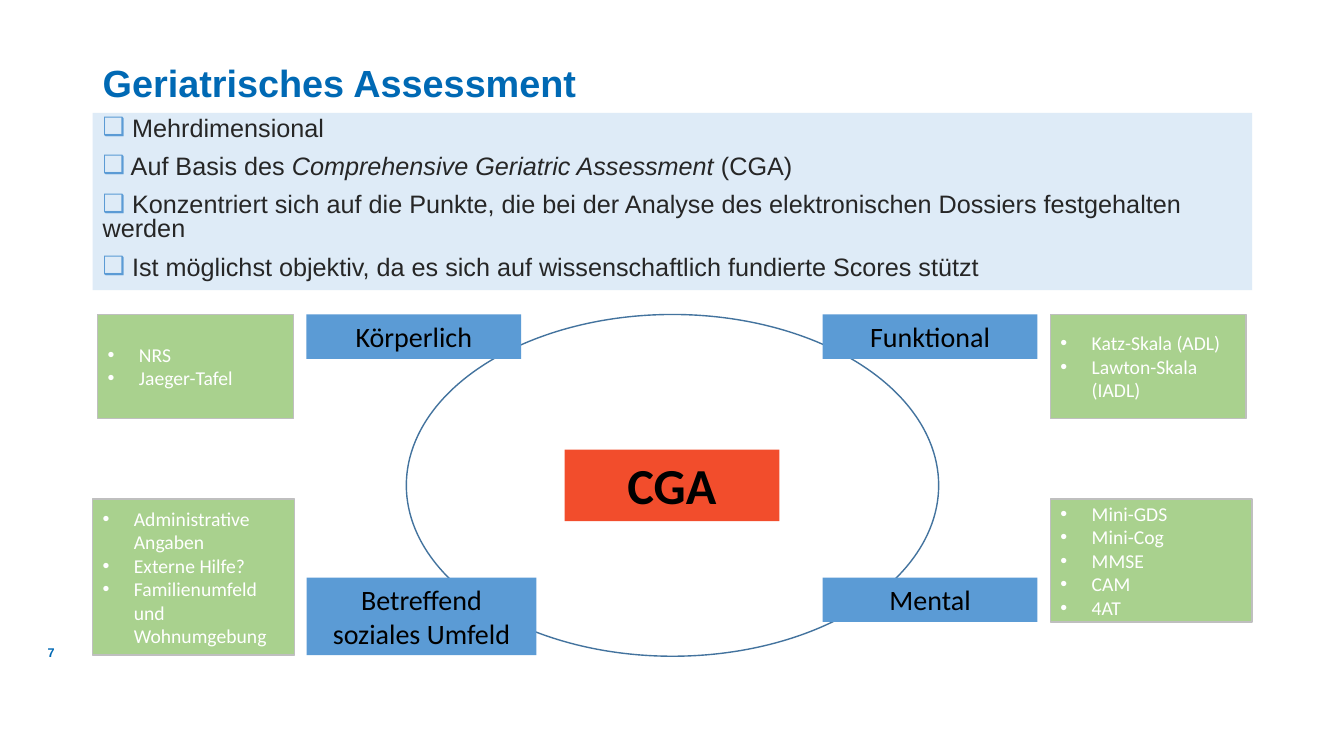
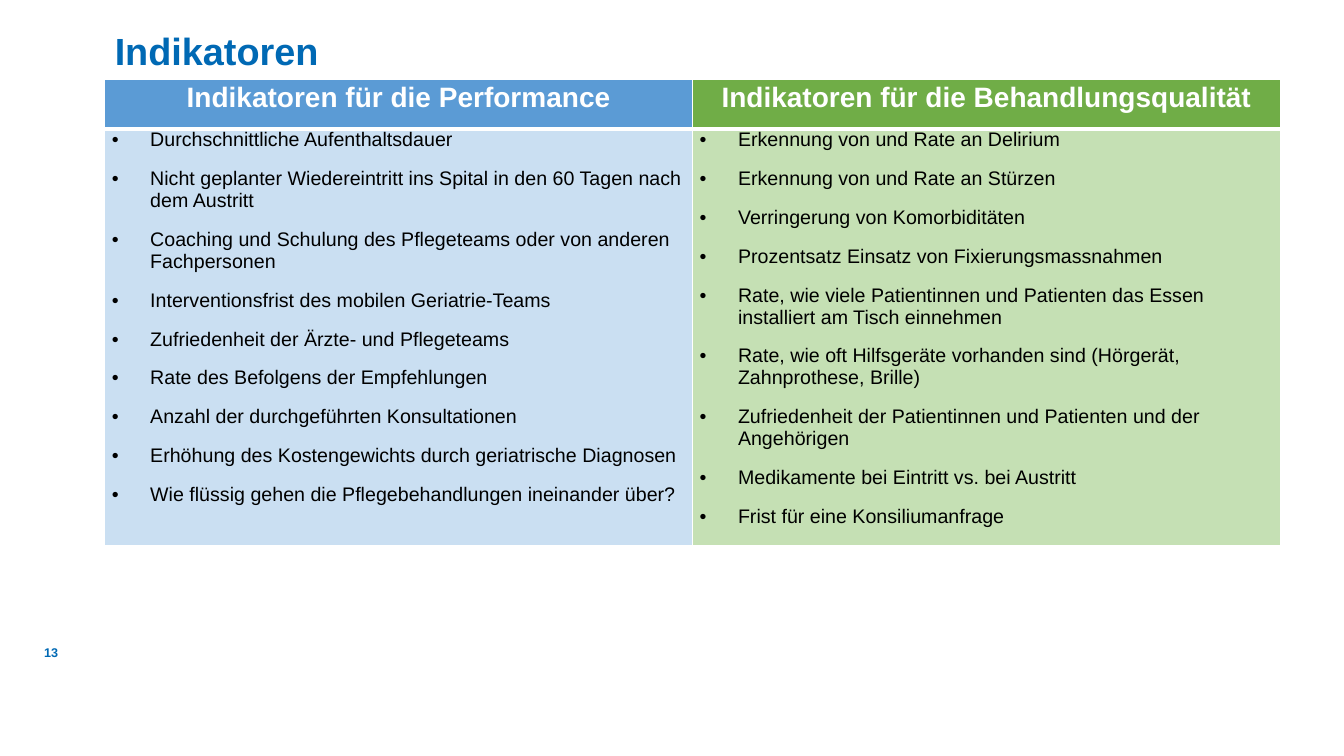
from lxml.etree import SubElement
from pptx import Presentation
from pptx.dml.color import RGBColor
from pptx.enum.shapes import MSO_SHAPE
from pptx.enum.text import MSO_ANCHOR, PP_ALIGN
from pptx.oxml.ns import qn
from pptx.util import Emu, Pt

EMU_PER_PX = 9144


def px(length):
    return Emu(length * EMU_PER_PX)


def rgb(color):
    return RGBColor.from_string(color)


def add_bullet(paragraph, mark, color, indent):
    properties = paragraph._p.get_or_add_pPr()
    properties.set("marL", str(px(indent)))
    properties.set("indent", str(px(-indent)))
    if color:
        SubElement(SubElement(properties, qn("a:buClr")), qn("a:srgbClr"), val=color)
    SubElement(properties, qn("a:buFont"), typeface="Arial")
    SubElement(properties, qn("a:buChar"), char=mark)


def write_text(frame, paragraphs, size=14, color="000000", font="Arial", bold=False,
               align=PP_ALIGN.LEFT, anchor=None, line_spacing=1.0, before=0, after=0,
               bullet=None, bullet_color=None, indent=0):
    frame.word_wrap = True
    if anchor is not None:
        frame.vertical_anchor = anchor
    for index, content in enumerate(paragraphs):
        paragraph = frame.add_paragraph() if index else frame.paragraphs[0]
        paragraph.alignment = align
        paragraph.line_spacing = line_spacing
        paragraph.space_before = Pt(before if index else 0)
        paragraph.space_after = Pt(after)
        if bullet:
            add_bullet(paragraph, bullet, bullet_color, indent)
        for part, words in enumerate(content.split("*")):
            run = paragraph.add_run()
            run.text = words
            run.font.name = font
            run.font.size = Pt(size)
            run.font.bold = bold
            run.font.italic = part % 2 == 1
            run.font.color.rgb = rgb(color)


class Deck:
    TITLE_BLUE = "0069B4"
    BLUE = "5B9BD5"
    GREEN = "70AD47"
    PALE_BLUE = "DEEBF7"
    SCORE_GREEN = "A9D18E"
    RED = "F24D2C"
    WHITE = "FFFFFF"

    def __init__(self):
        self.presentation = Presentation()
        self.presentation.slide_width = px(1333)
        self.presentation.slide_height = px(750)
        self.slide = None

    def new_slide(self, title, number, left, top):
        self.slide = self.presentation.slides.add_slide(self.presentation.slide_layouts[6])
        self.text((0, 632, 105, 30), [f"{number} "], size=9, color=self.TITLE_BLUE,
                  bold=True, align=PP_ALIGN.CENTER, anchor=MSO_ANCHOR.MIDDLE)
        self.text((left, top, 1150, 52), [title], size=27, color=self.TITLE_BLUE,
                  bold=True, line_spacing=0.9)

    def text(self, area, paragraphs, **style):
        box = self.slide.shapes.add_textbox(*map(px, area))
        write_text(box.text_frame, paragraphs, **style)

    def shape(self, area, fill, paragraphs=(), line=None, preset=MSO_SHAPE.RECTANGLE, **style):
        shape = self.slide.shapes.add_shape(preset, *map(px, area))
        shape.shadow.inherit = False
        shape.fill.solid()
        shape.fill.fore_color.rgb = rgb(fill)
        if line:
            shape.line.color.rgb = rgb(line)
            shape.line.width = Pt(1)
        else:
            shape.line.fill.background()
        write_text(shape.text_frame, paragraphs, **style)

    def label(self, area, name, fill=BLUE, size=20, bold=False):
        self.shape(area, fill, [name], size=size, bold=bold, font="Calibri",
                   align=PP_ALIGN.CENTER, anchor=MSO_ANCHOR.TOP)

    def scores(self, area, names):
        self.shape(area, self.SCORE_GREEN, names, line="BFBFBF", color=self.WHITE,
                   font="Calibri", anchor=MSO_ANCHOR.MIDDLE, bullet="•", indent=31)

    def cell(self, cell, fill, paragraphs, bottom=1, **style):
        cell.margin_left = cell.margin_right = px(7)
        cell.margin_top = cell.margin_bottom = 0
        properties = cell._tc.get_or_add_tcPr()
        for side, width in (("L", 1), ("R", 1), ("T", 1), ("B", bottom)):
            border = SubElement(properties, qn(f"a:ln{side}"), w=str(Pt(width)))
            SubElement(SubElement(border, qn("a:solidFill")), qn("a:srgbClr"), val=self.WHITE)
        cell.fill.solid()
        cell.fill.fore_color.rgb = rgb(fill)
        write_text(cell.text_frame, paragraphs, after=12, **style)

    def indicator_table(self, left, top, column_width, row_heights, columns):
        table = self.slide.shapes.add_table(
            2, len(columns), px(left), px(top),
            px(column_width * len(columns)), px(sum(row_heights))).table
        table.horz_banding = False
        for row, height in zip(table.rows, row_heights):
            row.height = px(height)
        for index, (heading, heading_fill, indicators, fill) in enumerate(columns):
            table.columns[index].width = px(column_width)
            self.cell(table.cell(0, index), heading_fill, [heading], bottom=3, size=20,
                      color=self.WHITE, bold=True, align=PP_ALIGN.CENTER, line_spacing=1.07)
            self.cell(table.cell(1, index), fill, indicators, bullet="•", indent=38)


def build_assessment(deck):
    deck.new_slide("Geriatrisches Assessment", 7, 92, 59)
    features = [
        " Mehrdimensional",
        " Auf Basis des *Comprehensive Geriatric Assessment* (CGA)",
        " Konzentriert sich auf die Punkte, die bei der Analyse des elektronischen "
        "Dossiers festgehalten werden",
        " Ist möglichst objektiv, da es sich auf wissenschaftlich fundierte Scores stützt",
    ]
    deck.shape((92, 112, 1150, 176), deck.PALE_BLUE, features, size=18, color="262626",
               anchor=MSO_ANCHOR.TOP, line_spacing=0.8, before=10,
               bullet="❑", bullet_color=deck.BLUE)
    deck.shape((403, 312, 528, 339), deck.WHITE, line="43739E", preset=MSO_SHAPE.OVAL)
    deck.label((560, 446, 213, 71), "CGA", fill=deck.RED, size=36, bold=True)

    dimensions = [
        ("Körperlich", (304, 312, 213, 44), (97, 312, 194, 103), ["NRS", "Jaeger-Tafel"]),
        ("Betreffend soziales Umfeld", (304, 573, 228, 77), (92, 495, 200, 155),
         ["Administrative Angaben", "Externe Hilfe?", "Familienumfeld und Wohnumgebung"]),
        ("Funktional", (816, 312, 213, 44), (1042, 312, 194, 103),
         ["Katz-Skala (ADL)", "Lawton-Skala (IADL)"]),
        ("Mental", (816, 573, 213, 44), (1042, 495, 200, 122),
         ["Mini-GDS", "Mini-Cog", "MMSE", "CAM", "4AT"]),
    ]
    for name, label_area, scores_area, scores in dimensions:
        deck.label(label_area, name)
        deck.scores(scores_area, scores)


def build_indicators(deck):
    deck.new_slide("Indikatoren", 13, 104, 28)
    performance = [
        "Durchschnittliche Aufenthaltsdauer",
        "Nicht geplanter Wiedereintritt ins Spital in den 60 Tagen nach dem Austritt",
        "Coaching und Schulung des Pflegeteams oder von anderen Fachpersonen",
        "Interventionsfrist des mobilen Geriatrie-Teams",
        "Zufriedenheit der Ärzte- und Pflegeteams",
        "Rate des Befolgens der Empfehlungen",
        "Anzahl der durchgeführten Konsultationen",
        "Erhöhung des Kostengewichts durch geriatrische Diagnosen",
        "Wie flüssig gehen die Pflegebehandlungen ineinander über?",
    ]
    quality = [
        "Erkennung von und Rate an Delirium",
        "Erkennung von und Rate an Stürzen",
        "Verringerung von Komorbiditäten",
        "Prozentsatz Einsatz von Fixierungsmassnahmen",
        "Rate, wie viele Patientinnen und Patienten das Essen installiert am Tisch einnehmen",
        "Rate, wie oft Hilfsgeräte vorhanden sind (Hörgerät, Zahnprothese, Brille)",
        "Zufriedenheit der Patientinnen und Patienten und der Angehörigen",
        "Medikamente bei Eintritt vs. bei Austritt",
        "Frist für eine Konsiliumanfrage",
    ]
    deck.indicator_table(104, 79, 583, (49, 407), [
        ("Indikatoren für die Performance", deck.BLUE, performance, "CADFF2"),
        ("Indikatoren für die Behandlungsqualität", deck.GREEN, quality, "C5E0B4"),
    ])


def main():
    deck = Deck()
    build_assessment(deck)
    build_indicators(deck)
    deck.presentation.save("out.pptx")


if __name__ == "__main__":
    main()
